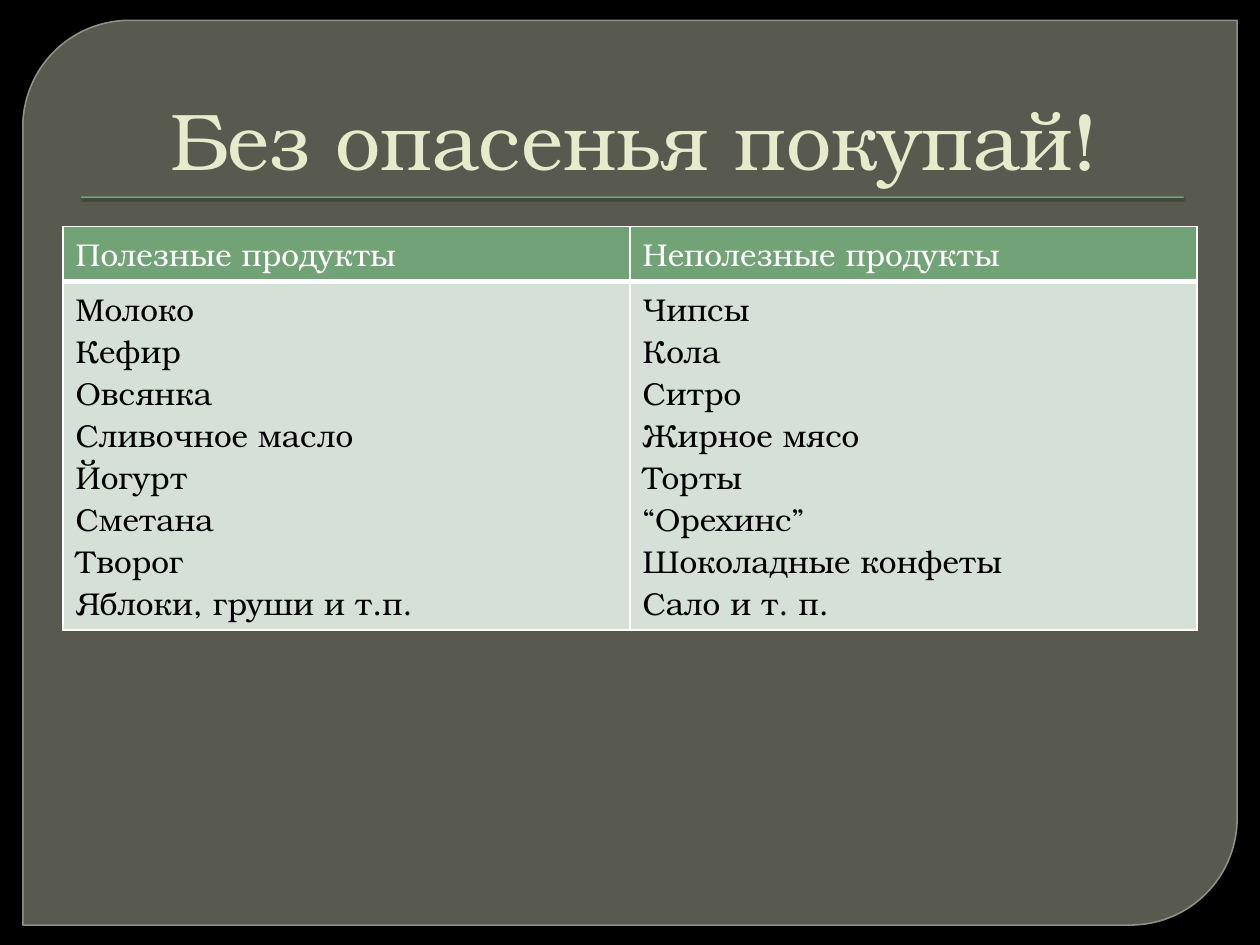
from lxml.etree import SubElement
from pptx import Presentation
from pptx.dml.color import RGBColor as RGB
from pptx.enum.shapes import MSO_SHAPE as SHAPE
from pptx.enum.text import MSO_ANCHOR as ANCHOR, PP_ALIGN as ALIGN
from pptx.oxml.ns import qn
from pptx.util import Cm, Pt

FONT = "TeX Gyre Bonum"
BLACK = RGB(0x00, 0x00, 0x00)
WHITE = RGB(0xFF, 0xFF, 0xFF)
PANEL = RGB(0x88, 0x8B, 0x7B)
PANEL_EDGE = RGB(0x9D, 0xA0, 0x90)
GREEN = RGB(0x72, 0xA3, 0x76)
PALE_GREEN = RGB(0xD5, 0xE0, 0xD6)
CREAM = RGB(0xE7, 0xEA, 0xCB)

PRODUCTS = {
    "Полезные продукты": [
        "Молоко", "Кефир", "Овсянка", "Сливочное масло",
        "Йогурт", "Сметана", "Творог", "Яблоки, груши и т.п."],
    "Неполезные продукты": [
        "Чипсы", "Кола", "Ситро", "Жирное мясо",
        "Торты", "“Орехинс”", "Шоколадные конфеты", "Сало и т. п."],
}


def add_color(parent, color, alpha=100):
    clr = SubElement(parent, qn("a:srgbClr"), val=str(color))
    if alpha < 100:
        SubElement(clr, qn("a:alpha"), val=str(alpha * 1000))


def set_alpha(fill_parent, alpha):
    clr = fill_parent.find(qn("a:solidFill")).find(qn("a:srgbClr"))
    SubElement(clr, qn("a:alpha"), val=str(alpha * 1000))


def style_font(p, size, color):
    p.font.name = FONT
    p.font.size = Pt(size)
    p.font.bold = False
    p.font.color.rgb = color


def add_filled_shape(slide, kind, box, color):
    sp = slide.shapes.add_shape(kind, *map(Cm, box))
    sp.shadow.inherit = False
    sp.fill.solid()
    sp.fill.fore_color.rgb = color
    return sp


def add_panel(slide):
    sp = add_filled_shape(slide, SHAPE.ROUND_2_DIAG_RECTANGLE,
                          (0.46, 0.41, 24.48, 18.24), PANEL)
    sp.adjustments[0] = 0.118
    sp.line.color.rgb = PANEL_EDGE
    sp.line.width = Pt(0.87)
    set_alpha(sp._element.spPr, 65)
    set_alpha(sp.line._ln, 88)


def add_title_rule(slide):
    sp = add_filled_shape(slide, SHAPE.RECTANGLE, (1.63, 3.96, 22.23, 0.03), GREEN)
    sp.line.fill.background()
    effects = sp._element.spPr.find(qn("a:effectLst"))
    shadow = SubElement(effects, qn("a:outerShdw"), blurRad=str(Pt(1)),
                        dist=str(Pt(1)), dir="5400000")
    add_color(shadow, BLACK, 75)


def set_title(slide, text):
    title = slide.shapes.title
    title.left, title.top, title.width, title.height = map(Cm, (1.27, 0.71, 22.86, 3.18))
    tf = title.text_frame
    tf.text = text
    tf.vertical_anchor = ANCHOR.BOTTOM
    p = tf.paragraphs[0]
    p.alignment = ALIGN.CENTER
    p._p.get_or_add_pPr().set("marL", str(Cm(0.15)))
    style_font(p, 46, CREAM)
    slide.shapes._spTree.append(title._element)  # in front of the panel


def set_borders(cell, bottom):
    tc_pr = cell._tc.get_or_add_tcPr()
    for side, width in (("L", 1), ("R", 1), ("T", 1), ("B", bottom)):
        ln = SubElement(tc_pr, qn(f"a:ln{side}"), w=str(Pt(width)))
        add_color(SubElement(ln, qn("a:solidFill")), WHITE)


def fill_cell(cell, text, fill, color, bottom):
    set_borders(cell, bottom)
    cell.fill.solid()
    cell.fill.fore_color.rgb = fill
    p = cell.text_frame.paragraphs[0]
    p.text = text
    style_font(p, 18, color)


def add_products_table(slide):
    table = slide.shapes.add_table(2, len(PRODUCTS), Cm(1.27), Cm(4.57),
                                   Cm(22.86), Cm(8.1)).table
    table.rows[0].height = Cm(1.1)
    table.rows[1].height = Cm(7)
    for col, (heading, products) in enumerate(PRODUCTS.items()):
        fill_cell(table.cell(0, col), heading, GREEN, WHITE, bottom=3)
        fill_cell(table.cell(1, col), "\v".join(products), PALE_GREEN, BLACK, bottom=1)


def main():
    prs = Presentation()
    prs.slide_width, prs.slide_height = Cm(25.4), Cm(19.05)
    slide = prs.slides.add_slide(prs.slide_layouts[5])
    slide.background.fill.solid()
    slide.background.fill.fore_color.rgb = BLACK
    add_panel(slide)
    add_title_rule(slide)
    set_title(slide, "Без опасенья покупай!")
    add_products_table(slide)
    prs.save("out.pptx")


if __name__ == "__main__":
    main()
